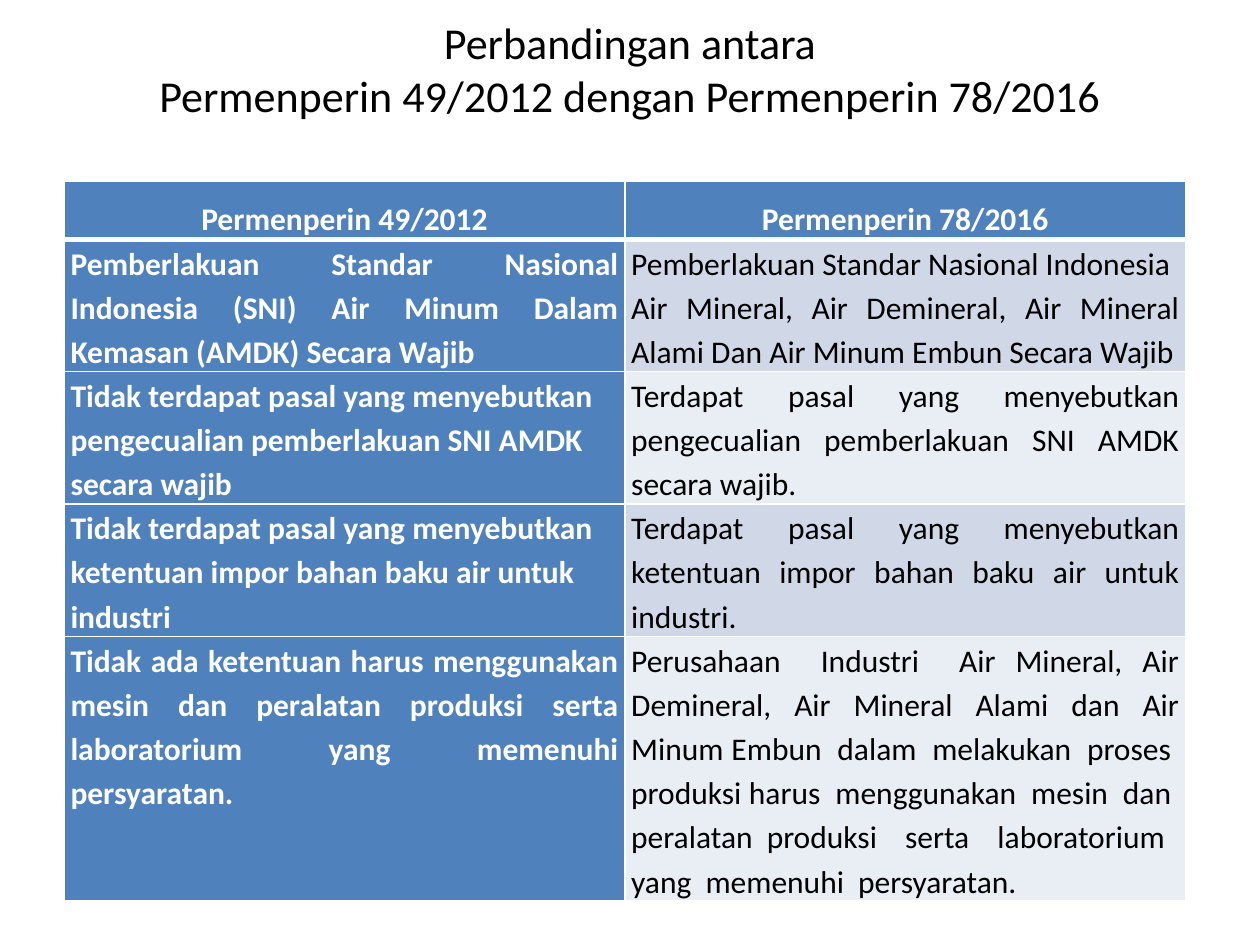
"""Build a slide comparing two ministerial regulations in a table."""
from dataclasses import dataclass

from lxml import etree
from pptx import Presentation
from pptx.dml.color import RGBColor
from pptx.enum.text import MSO_ANCHOR, PP_ALIGN
from pptx.oxml.ns import qn
from pptx.slide import Slide
from pptx.table import _Cell
from pptx.text.text import _Paragraph
from pptx.util import Inches, Pt

LEFT, CENTER, JUSTIFY = PP_ALIGN.LEFT, PP_ALIGN.CENTER, PP_ALIGN.JUSTIFY
TOP, MIDDLE = MSO_ANCHOR.TOP, MSO_ANCHOR.MIDDLE
WHITE = RGBColor(0xFF, 0xFF, 0xFF)
BLACK = RGBColor(0x00, 0x00, 0x00)
BLUE = RGBColor(0x4F, 0x81, 0xBD)
BANDS = (RGBColor(0xD0, 0xD8, 0xE8), RGBColor(0xE9, 0xED, 0xF4))
FONT = "Calibri"
COLUMN_WIDTH = 4.45
HEADER_HEIGHT = 0.46
TITLE = ("Perbandingan antara", "Permenperin 49/2012 dengan Permenperin 78/2016")
HEADERS = ("Permenperin 49/2012", "Permenperin 78/2016")


@dataclass(frozen=True)
class Comparison:
    """One table row: the old rule, the new rule and the row height in inches."""
    old: str
    new: tuple[str, ...]
    old_alignment: PP_ALIGN = LEFT
    height: float = 1.05


@dataclass(frozen=True)
class CellStyle:
    """Look of a table cell."""
    fill: RGBColor
    color: RGBColor = WHITE
    bold: bool = True
    alignment: PP_ALIGN = JUSTIFY
    anchor: MSO_ANCHOR = TOP
    line_spacing: float = 1.15


COMPARISONS = (
    Comparison(
        "Pemberlakuan Standar Nasional Indonesia (SNI) Air Minum Dalam Kemasan (AMDK) Secara Wajib",
        ("Pemberlakuan Standar Nasional Indonesia ",
         "Air Mineral, Air Demineral, Air Mineral Alami Dan Air Minum Embun Secara Wajib"),
        JUSTIFY),
    Comparison(
        "Tidak terdapat pasal yang menyebutkan pengecualian pemberlakuan SNI AMDK secara wajib",
        ("Terdapat pasal yang menyebutkan pengecualian pemberlakuan SNI AMDK secara wajib.",)),
    Comparison(
        "Tidak terdapat pasal yang menyebutkan ketentuan impor bahan baku air untuk industri",
        ("Terdapat pasal yang menyebutkan ketentuan impor bahan baku air untuk industri.",)),
    Comparison(
        "Tidak ada ketentuan harus menggunakan mesin dan peralatan produksi serta laboratorium "
        "yang memenuhi persyaratan.",
        ("Perusahaan  Industri  Air Mineral, Air Demineral, Air Mineral Alami dan Air Minum Embun  "
         "dalam  melakukan  proses  produksi harus  menggunakan  mesin  dan  peralatan produksi  "
         "serta  laboratorium  yang  memenuhi  persyaratan.",),
        JUSTIFY, 2.1),
)


def set_font(paragraph: _Paragraph, size: float, color: RGBColor, bold: bool) -> None:
    """Set the font of a whole paragraph."""
    font = paragraph.font
    font.name, font.size, font.bold = FONT, Pt(size), bold
    font.color.rgb = color


def set_borders(cell: _Cell, top: int, bottom: int) -> None:
    """Draw white cell borders, with top and bottom widths in points."""
    properties = cell._tc.get_or_add_tcPr()
    widths = {"a:lnL": 1, "a:lnR": 1, "a:lnT": top, "a:lnB": bottom}
    for position, (tag, width) in enumerate(widths.items()):
        line = etree.Element(qn(tag), w=str(Pt(width)))
        fill = etree.SubElement(line, qn("a:solidFill"))
        etree.SubElement(fill, qn("a:srgbClr"), val=str(WHITE))
        properties.insert(position, line)


def fill_cell(cell: _Cell, texts: tuple[str, ...], style: CellStyle) -> None:
    """Write paragraphs into a cell and style it."""
    cell.margin_left = cell.margin_right = Inches(0.05)
    cell.margin_top = cell.margin_bottom = Inches(0)
    cell.vertical_anchor = style.anchor
    cell.fill.solid()
    cell.fill.fore_color.rgb = style.fill
    frame = cell.text_frame
    for index, text in enumerate(texts):
        paragraph = frame.add_paragraph() if index else frame.paragraphs[0]
        paragraph.text = text
        paragraph.alignment = style.alignment
        paragraph.line_spacing = style.line_spacing
        set_font(paragraph, 18, style.color, style.bold)


def add_title(slide: Slide) -> None:
    """Add the two-line title."""
    box = slide.shapes.add_textbox(Inches(0.75), Inches(0.21), Inches(8.5), Inches(0.66))
    frame = box.text_frame
    frame.word_wrap = True
    frame.vertical_anchor = MIDDLE
    paragraph = frame.paragraphs[0]
    first_line, second_line = TITLE
    paragraph.add_run().text = first_line
    paragraph.add_line_break()
    paragraph.add_run().text = second_line
    paragraph.alignment = CENTER
    set_font(paragraph, 25.2, BLACK, False)


def add_comparison_table(slide: Slide) -> None:
    """Add the table with a header row and banded right column."""
    heights = [HEADER_HEIGHT, *(comparison.height for comparison in COMPARISONS)]
    table = slide.shapes.add_table(
        len(heights), len(HEADERS), Inches(0.51), Inches(1.44),
        Inches(COLUMN_WIDTH * len(HEADERS)), Inches(sum(heights))).table
    for column in table.columns:
        column.width = Inches(COLUMN_WIDTH)
    for row, height in zip(table.rows, heights):
        row.height = Inches(height)

    header_style = CellStyle(BLUE, alignment=CENTER, anchor=MIDDLE, line_spacing=1.5)
    for column_index, header in enumerate(HEADERS):
        fill_cell(table.cell(0, column_index), (header,), header_style)
    for index, comparison in enumerate(COMPARISONS):
        old_style = CellStyle(BLUE, alignment=comparison.old_alignment)
        new_style = CellStyle(BANDS[index % len(BANDS)], BLACK, False)
        fill_cell(table.cell(index + 1, 0), (comparison.old,), old_style)
        fill_cell(table.cell(index + 1, 1), comparison.new, new_style)
    for row_index, row in enumerate(table.rows):
        for cell in row.cells:
            set_borders(cell, 3 if row_index == 1 else 1, 3 if row_index == 0 else 1)


def main() -> None:
    """Build and save the presentation."""
    presentation = Presentation()
    presentation.slide_width, presentation.slide_height = Inches(10), Inches(7.5)
    slide = presentation.slides.add_slide(presentation.slide_layouts[6])
    add_title(slide)
    add_comparison_table(slide)
    presentation.save("out.pptx")


if __name__ == "__main__":
    main()
